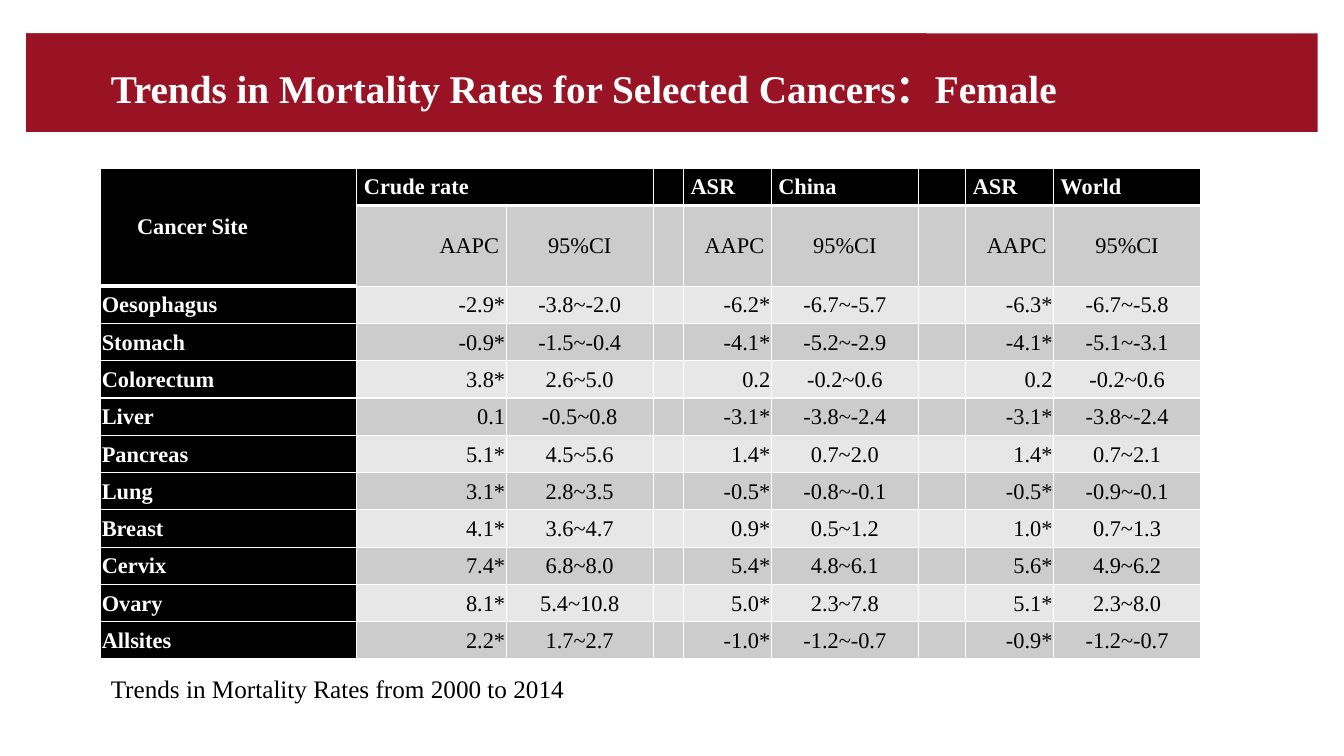
from lxml.etree import SubElement
from pptx import Presentation
from pptx.dml.color import RGBColor
from pptx.enum.shapes import MSO_SHAPE as Preset
from pptx.enum.text import MSO_ANCHOR as Anchor, PP_ALIGN as Align
from pptx.oxml.ns import qn
from pptx.util import Inches, Pt

TITLE = "Trends in Mortality Rates for Selected Cancers：Female"
FOOTNOTE = "Trends in Mortality Rates from 2000 to 2014"
HEADERS = [
    ("Cancer Site", "Crude rate", "", "", "ASR", "China", "", "ASR", "World"),
    ("", "AAPC", "95%CI", "", "AAPC", "95%CI", "", "AAPC", "95%CI"),
]
RATES = [
    ("Oesophagus", "-2.9*", "-3.8~-2.0", "", "-6.2*", "-6.7~-5.7", "", "-6.3*", "-6.7~-5.8"),
    ("Stomach", "-0.9*", "-1.5~-0.4", "", "-4.1*", "-5.2~-2.9", "", "-4.1*", "-5.1~-3.1"),
    ("Colorectum", "3.8*", "2.6~5.0", "", "0.2", "-0.2~0.6", "", "0.2", "-0.2~0.6"),
    ("Liver", "0.1", "-0.5~0.8", "", "-3.1*", "-3.8~-2.4", "", "-3.1*", "-3.8~-2.4"),
    ("Pancreas", "5.1*", "4.5~5.6", "", "1.4*", "0.7~2.0", "", "1.4*", "0.7~2.1"),
    ("Lung", "3.1*", "2.8~3.5", "", "-0.5*", "-0.8~-0.1", "", "-0.5*", "-0.9~-0.1"),
    ("Breast", "4.1*", "3.6~4.7", "", "0.9*", "0.5~1.2", "", "1.0*", "0.7~1.3"),
    ("Cervix", "7.4*", "6.8~8.0", "", "5.4*", "4.8~6.1", "", "5.6*", "4.9~6.2"),
    ("Ovary", "8.1*", "5.4~10.8", "", "5.0*", "2.3~7.8", "", "5.1*", "2.3~8.0"),
    ("Allsites", "2.2*", "1.7~2.7", "", "-1.0*", "-1.2~-0.7", "", "-0.9*", "-1.2~-0.7"),
]
COLUMN_WIDTHS = [2.54, 1.48, 1.46, 0.3, 0.87, 1.46, 0.47, 0.87, 1.46]
ROW_HEIGHTS = [0.37, 0.8] + [0.37] * len(RATES)
AAPC_COLUMNS = (1, 4, 7)
COLORS = {"banner": "991324", "white": "FFFFFF", "black": "000000",
          "dark_band": "CCCCCC", "light_band": "E7E7E7"}
FONT = "Times New Roman"


def color(name):
    """Return the named palette colour."""
    return RGBColor.from_string(COLORS[name])


def add_run(paragraph, text, size, color_name, bold=False):
    """Add one styled run to a paragraph."""
    run = paragraph.add_run()
    run.text = text
    run.font.name = FONT
    run.font.size = Pt(size)
    run.font.bold = bold
    run.font.color.rgb = color(color_name)


def add_banner(slide):
    """Draw the two overlapping banner rectangles."""
    for width in (12.81, 8.93):
        shape = slide.shapes.add_shape(
            Preset.RECTANGLE, Inches(0.26), Inches(0.33), Inches(width), Inches(0.98))
        shape.shadow.inherit = False
        shape.fill.solid()
        shape.fill.fore_color.rgb = color("banner")
        shape.line.fill.background()


def add_text(slide, box, text, size, color_name, bold=False, anchor=Anchor.TOP, spacing=1.0):
    """Add a wrapped single-paragraph text box."""
    frame = slide.shapes.add_textbox(*map(Inches, box)).text_frame
    frame.word_wrap = True
    frame.vertical_anchor = anchor
    paragraph = frame.paragraphs[0]
    paragraph.line_spacing = spacing
    add_run(paragraph, text, size, color_name, bold)


def set_borders(cell, bottom_width):
    """Give a cell white borders on all four sides."""
    properties = cell._tc.get_or_add_tcPr()
    for side, width in (("L", 1), ("R", 1), ("T", 1), ("B", bottom_width)):
        line = SubElement(properties, qn(f"a:ln{side}"), w=str(Pt(width)))
        fill = SubElement(line, qn("a:solidFill"))
        SubElement(fill, qn("a:srgbClr"), val=COLORS["white"])


def fill_cell(cell, text, row, column):
    """Style one table cell by its row and column."""
    is_header = row == 0 or column == 0
    set_borders(cell, 3 if row == 0 or (row == 1 and column == 0) else 1)
    band = "dark_band" if row % 2 else "light_band"
    cell.fill.solid()
    cell.fill.fore_color.rgb = color("black" if is_header else band)
    cell.vertical_anchor = Anchor.MIDDLE
    side = Inches(0.07 if row < 2 else 0.01)
    cell.margin_left = Inches(0.36) if row == column == 0 else side
    cell.margin_right = side
    cell.margin_top = Inches(0 if row < 2 else 0.01)
    cell.margin_bottom = 0
    paragraph = cell.text_frame.paragraphs[0]
    paragraph.font.size = Pt(16)
    if not is_header:
        paragraph.alignment = Align.RIGHT if column in AAPC_COLUMNS else Align.CENTER
    if text:
        add_run(paragraph, text, 16, "white" if is_header else "black", is_header)


def add_rates_table(slide):
    """Build the mortality trend table."""
    rows = HEADERS + RATES
    table = slide.shapes.add_table(
        len(rows), len(COLUMN_WIDTHS), Inches(1), Inches(1.67),
        Inches(sum(COLUMN_WIDTHS)), Inches(sum(ROW_HEIGHTS))).table
    for column, width in zip(table.columns, COLUMN_WIDTHS):
        column.width = Inches(width)
    for table_row, height in zip(table.rows, ROW_HEIGHTS):
        table_row.height = Inches(height)
    for row, texts in enumerate(rows):
        for column, text in enumerate(texts):
            fill_cell(table.cell(row, column), text, row, column)
    table.cell(0, 0).merge(table.cell(1, 0))
    table.cell(0, 1).merge(table.cell(0, 2))


def main():
    """Build and save the slide."""
    presentation = Presentation()
    presentation.slide_width = Inches(13.33)
    presentation.slide_height = Inches(7.5)
    slide = presentation.slides.add_slide(presentation.slide_layouts[6])
    add_banner(slide)
    add_text(slide, (1, 0.44, 11.08, 0.93), TITLE, 28, "white", True, Anchor.MIDDLE, 0.9)
    add_rates_table(slide)
    add_text(slide, (1, 6.63, 5.92, 0.4), FOOTNOTE, 18, "black")
    presentation.save("out.pptx")


if __name__ == "__main__":
    main()
